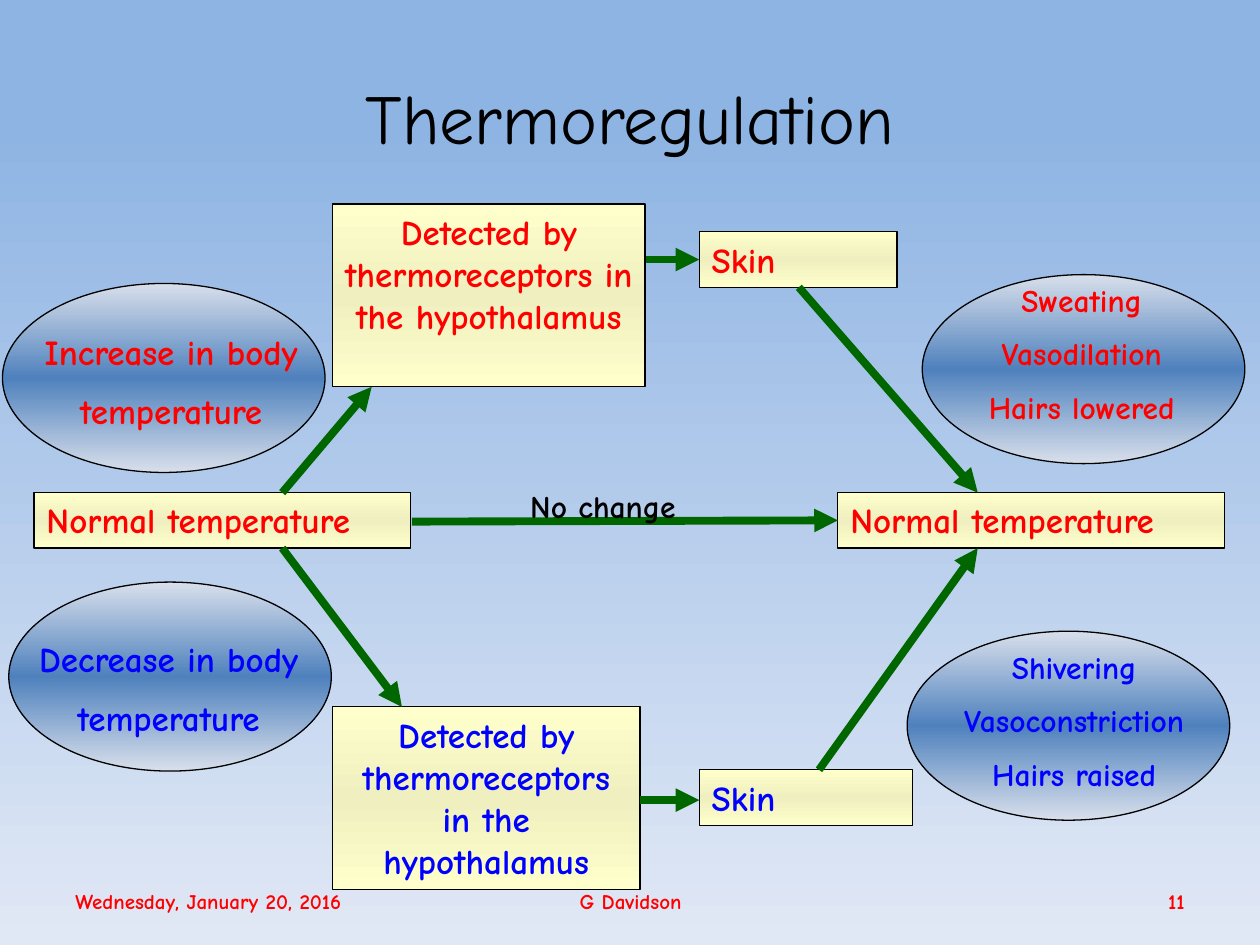
from dataclasses import dataclass

from lxml import etree
from pptx import Presentation
from pptx.dml.color import RGBColor
from pptx.enum.shapes import MSO_CONNECTOR, MSO_SHAPE
from pptx.enum.text import MSO_ANCHOR, MSO_AUTO_SIZE, PP_ALIGN
from pptx.oxml.ns import qn
from pptx.util import Inches, Pt

RECT, OVAL = MSO_SHAPE.RECTANGLE, MSO_SHAPE.OVAL
STRAIGHT = MSO_CONNECTOR.STRAIGHT
LEFT, CENTER, RIGHT = PP_ALIGN.LEFT, PP_ALIGN.CENTER, PP_ALIGN.RIGHT
TOP, MIDDLE = MSO_ANCHOR.TOP, MSO_ANCHOR.MIDDLE
GROW = MSO_AUTO_SIZE.SHAPE_TO_FIT_TEXT

COLS, ROWS = 100, 75  # grid of square cells covering the slide
CELL = 0.1
BOX_H = 4.4
DETECTOR_H = 14.5
OVAL_SIZE = (25.6, 15)


@dataclass(frozen=True)
class Theme:
    font: str = "Comic Neue"
    hot: str = "FF0000"
    cold: str = "0000FF"
    ink: str = "000000"
    arrow: str = "006600"
    sky: tuple = ((13, "8EB4E3"), (100, "E1E8F5"))
    cream: tuple = ((0, "FFFFCC"), (50, "EFEFBF"), (100, "FFFFCC"))
    blue: tuple = ((0, "D8DFEB"), (50, "4F81BD"), (100, "D8DFEB"))
    title: int = 40
    body: int = 20
    label: int = 18
    footer: int = 12
    outline: float = 0.75
    arrow_width: float = 4.5


T = Theme()


def grid(*cells):
    """Turn grid cells into slide lengths."""
    return [Inches(c * CELL) for c in cells]


def set_gradient(fill, root, stops):
    """Fill from top to bottom with (percent, colour) stops."""
    fill.gradient()
    fill.gradient_angle = 270
    gs_list = next(root.iter(qn("a:gsLst")))
    for gs in list(gs_list):
        gs_list.remove(gs)
    for percent, color in stops:
        gs = etree.SubElement(gs_list, qn("a:gs"), pos=str(percent * 1000))
        etree.SubElement(gs, qn("a:srgbClr"), val=color)


def write(sp, text, size=T.body, color=T.ink, bold=True, align=CENTER,
          anchor=TOP, grow=True):
    """Put text in a shape, one paragraph for each line."""
    tf = sp.text_frame
    tf.word_wrap = True
    tf.vertical_anchor = anchor
    if grow:
        tf.auto_size = GROW
    for i, line in enumerate(text.split("\n")):
        p = tf.paragraphs[0] if i == 0 else tf.add_paragraph()
        p.alignment = align
        if i:
            p.space_before = Pt(size / 2)
        r = p.add_run()
        r.text = line
        r.font.name = T.font
        r.font.size = Pt(size)
        r.font.bold = bold
        r.font.color.rgb = RGBColor.from_string(color)


def add_text(shapes, at, text, **fmt):
    write(shapes.add_textbox(*grid(*at)), text, **fmt)


def add_panel(shapes, kind, at, stops):
    """Add an outlined shape with a gradient."""
    sp = shapes.add_shape(kind, *grid(*at))
    sp.shadow.inherit = False
    set_gradient(sp.fill, sp.element, stops)
    sp.line.color.rgb = RGBColor.from_string(T.ink)
    sp.line.width = Pt(T.outline)
    return sp


def add_box(shapes, at, text, **fmt):
    write(add_panel(shapes, RECT, at, T.cream), text, **fmt)


def add_bubble(shapes, oval_at, text_at, text, **fmt):
    """Group an ellipse with its caption."""
    group = shapes.add_group_shape().shapes
    add_panel(group, OVAL, (*oval_at, *OVAL_SIZE), T.blue)
    add_text(group, text_at, text, **fmt)


def add_arrow(shapes, start, end):
    line = shapes.add_connector(STRAIGHT, *grid(*start, *end))
    line.line.color.rgb = RGBColor.from_string(T.arrow)
    line.line.width = Pt(T.arrow_width)
    ln = line.line._get_or_add_ln()
    etree.SubElement(ln, qn("a:tailEnd"), type="triangle")
    etree.SubElement(line.element.spPr, qn("a:effectLst"))


def add_footer(shapes):
    for left, width, text, align in (
            (5, 33.2, "Wednesday, January 20, 2016", LEFT),
            (34.2, 31.7, "G Davidson", CENTER),
            (71.7, 23.3, "11", RIGHT)):
        add_text(shapes, (left, 69.5, width, 4), text, size=T.footer,
                 color=T.hot, align=align, anchor=MIDDLE, grow=False)


def add_boxes(shapes):
    for color, top, width, skin_top, skin_width in (
            (T.cold, 56.1, 24.4, 61.1, 16.9),
            (T.hot, 16.2, 24.8, 18.4, 15.7)):
        add_box(shapes, (26.4, top, width, DETECTOR_H),
                "Detected by thermoreceptors in the hypothalamus", color=color)
        add_box(shapes, (55.5, skin_top, skin_width, BOX_H), "Skin",
                color=color, align=LEFT)
    for left, width in ((66.5, 30.7), (2.7, 29.9)):
        add_box(shapes, (left, 39.1, width, BOX_H), "Normal temperature",
                color=T.hot, align=LEFT)


def add_bubbles(shapes):
    for oval_at, text_at, text, size, color in (
            ((0.2, 22.5), (-0.2, 25.7, 27.6, 9.4),
             "Increase in body\ntemperature", T.body, T.hot),
            ((0.7, 46.2), (-0.4, 50.1, 27.6, 9.4),
             "Decrease in body\ntemperature", T.body, T.cold),
            ((73.2, 21.8), (75.2, 21.8, 21.3, 13.1),
             "Sweating\nVasodilation\nHairs lowered", T.label, T.hot),
            ((72, 50.1), (73.2, 50.9, 24.1, 13.1),
             "Shivering\nVasoconstriction\nHairs raised", T.label, T.cold)):
        add_bubble(shapes, oval_at, text_at, text, size=size, color=color)


def add_arrows(shapes):
    for start, end in (
            ((22.4, 39.1), (29.5, 30.7)),
            ((22.4, 43.5), (31.9, 56.1)),
            ((65, 61.1), (77.6, 43.5)),
            ((63.4, 22.8), (77.6, 39.1)),
            ((50.8, 63.5), (55.5, 63.5)),
            ((32.7, 41.4), (66.5, 41.3))):
        add_arrow(shapes, start, end)


def main():
    prs = Presentation()
    prs.slide_width, prs.slide_height = grid(COLS, ROWS)
    s = prs.slides.add_slide(prs.slide_layouts[6])
    set_gradient(s.background.fill, s.element, T.sky)
    shapes = s.shapes
    add_footer(shapes)
    add_text(shapes, (5, 3, 90, 12.5), "Thermoregulation", size=T.title,
             bold=False, anchor=MIDDLE, grow=False)
    add_arrow(shapes, (50.8, 20.6), (55.5, 20.6))
    add_boxes(shapes)
    add_bubbles(shapes)
    add_arrows(shapes)
    add_text(shapes, (35.8, 38.2, 24.1, 4), "No change", size=T.label)
    prs.save("out.pptx")


if __name__ == "__main__":
    main()
